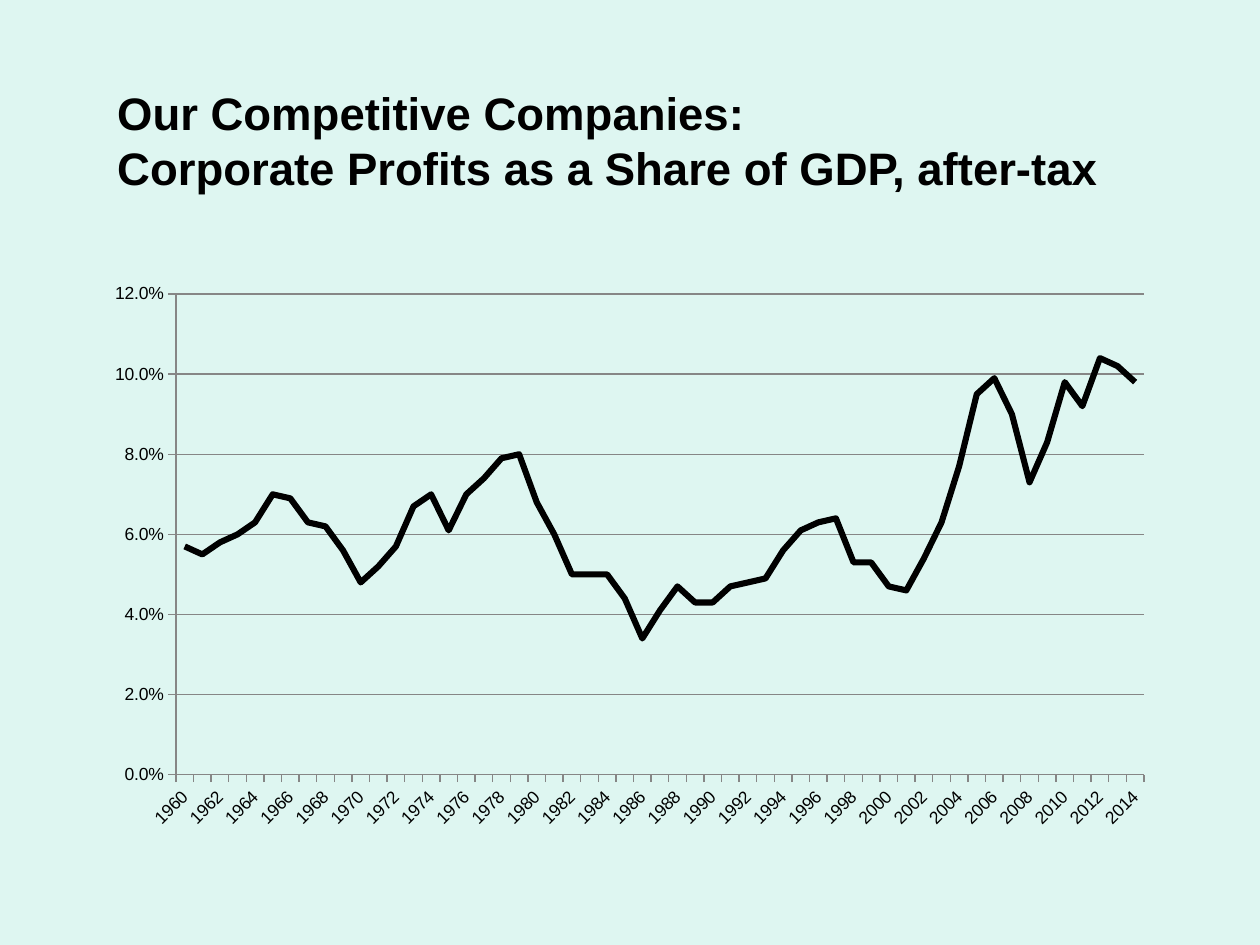
from dataclasses import dataclass

from lxml.etree import SubElement
from pptx import Presentation
from pptx.chart.data import CategoryChartData
from pptx.dml.color import RGBColor
from pptx.enum.chart import XL_CHART_TYPE, XL_MARKER_STYLE, XL_TICK_MARK
from pptx.enum.text import MSO_ANCHOR, PP_ALIGN
from pptx.oxml.ns import qn
from pptx.util import Inches, Pt

COLORS = {"background": "DEF6F1", "ink": "000000", "grid": "868686"}
WIDTH, HEIGHT = Inches(10), Inches(7.5)
FIRST_YEAR = 1960
PROFIT_SHARES = [
    0.057, 0.055, 0.058, 0.06, 0.063, 0.07, 0.069, 0.063, 0.062, 0.056,
    0.048, 0.052, 0.057, 0.067, 0.07, 0.061, 0.07, 0.074, 0.079, 0.08,
    0.068, 0.06, 0.05, 0.05, 0.05, 0.044, 0.034, 0.041, 0.047, 0.043,
    0.043, 0.047, 0.048, 0.049, 0.056, 0.061, 0.063, 0.064, 0.053, 0.053,
    0.047, 0.046, 0.054, 0.063, 0.077, 0.095, 0.099, 0.09, 0.073, 0.083,
    0.098, 0.092, 0.104, 0.102, 0.098,
]


@dataclass
class Area:
    x: float
    y: float
    w: float
    h: float

    def lengths(self) -> dict:
        return {
            "left": round(WIDTH * self.x), "top": round(HEIGHT * self.y),
            "width": round(WIDTH * self.w), "height": round(HEIGHT * self.h),
        }


TITLE = Area(0.083, 0.09, 0.842, 0.166)
CHART = Area(0.075, 0.289, 0.85, 0.6)
PLOT = Area(0.076, 0.037, 0.904, 0.848)


def apply(target, values: dict) -> None:
    for name, value in values.items():
        setattr(target, name, value)


def color(name: str) -> RGBColor:
    return RGBColor.from_string(COLORS[name])


def style_font(font, size: float, bold: bool) -> None:
    apply(font, {"name": "Arial", "size": Pt(size), "bold": bold})
    font.color.rgb = color("ink")


def style_line(line, name: str, width: float) -> None:
    line.color.rgb = color(name)
    line.width = Pt(width)


def add_title(page, text: str) -> None:
    box = page.shapes.title
    apply(box, TITLE.lengths())
    frame = box.text_frame
    apply(frame, {"word_wrap": True, "vertical_anchor": MSO_ANCHOR.TOP,
                  "margin_top": 0, "margin_bottom": 0})
    para = frame.paragraphs[0]
    apply(para, {"text": text, "alignment": PP_ALIGN.LEFT})
    for span in para.runs:
        style_font(span.font, 26, True)


def place_plot(chart, area: Area) -> None:
    plot_area = chart.plots[0]._element.getparent()
    for old in plot_area.findall(qn("c:layout")):
        plot_area.remove(old)
    layout = SubElement(plot_area, qn("c:layout"))
    plot_area.insert(0, layout)
    manual = SubElement(layout, qn("c:manualLayout"))
    values = {"layoutTarget": "inner", "xMode": "edge", "yMode": "edge",
              "x": area.x, "y": area.y, "w": area.w, "h": area.h}
    for name, value in values.items():
        SubElement(manual, qn(f"c:{name}")).set("val", str(value))


def style_axes(chart) -> None:
    years, shares = chart.category_axis, chart.value_axis
    for axis in (years, shares):
        apply(axis, {"major_tick_mark": XL_TICK_MARK.OUTSIDE,
                     "minor_tick_mark": XL_TICK_MARK.NONE})
        style_line(axis.format.line, "grid", 0.75)
        style_font(axis.tick_labels.font, 10, False)
    apply(shares, {"minimum_scale": 0, "maximum_scale": 0.12, "major_unit": 0.02,
                   "has_major_gridlines": True})
    style_line(shares.major_gridlines.format.line, "grid", 0.75)
    apply(shares.tick_labels, {"number_format": "0.0%",
                               "number_format_is_linked": False})
    element = years._element
    element.find(qn("c:txPr")).find(qn("a:bodyPr")).set("rot", "-2700000")
    last = element.find(qn("c:noMultiLvlLbl"))
    for name, step in {"tickLblSkip": 2, "tickMarkSkip": 1}.items():
        skip = SubElement(element, qn(f"c:{name}"))
        skip.set("val", str(step))
        last.addprevious(skip)


def add_profit_chart(page) -> None:
    data = CategoryChartData(number_format="0.0%")
    data.categories = [str(FIRST_YEAR + i) for i in range(len(PROFIT_SHARES))]
    data.add_series("Series 1", PROFIT_SHARES)
    chart = page.shapes.add_chart(
        XL_CHART_TYPE.LINE, *CHART.lengths().values(), data).chart
    apply(chart, {"has_legend": False, "has_title": False})
    style_font(chart.font, 10, False)
    chart.plots[0].vary_by_categories = False
    series = chart.plots[0].series[0]
    series.smooth = False
    series.marker.style = XL_MARKER_STYLE.NONE
    style_line(series.format.line, "ink", 3.5)
    style_axes(chart)
    place_plot(chart, PLOT)


def main() -> None:
    deck = Presentation()
    apply(deck, {"slide_width": WIDTH, "slide_height": HEIGHT})
    page = deck.slides.add_slide(deck.slide_layouts[5])
    page.background.fill.solid()
    page.background.fill.fore_color.rgb = color("background")
    add_title(page, "Our Competitive Companies:\v"
                    "Corporate Profits as a Share of GDP, after-tax")
    add_profit_chart(page)
    deck.save("out.pptx")


if __name__ == "__main__":
    main()
